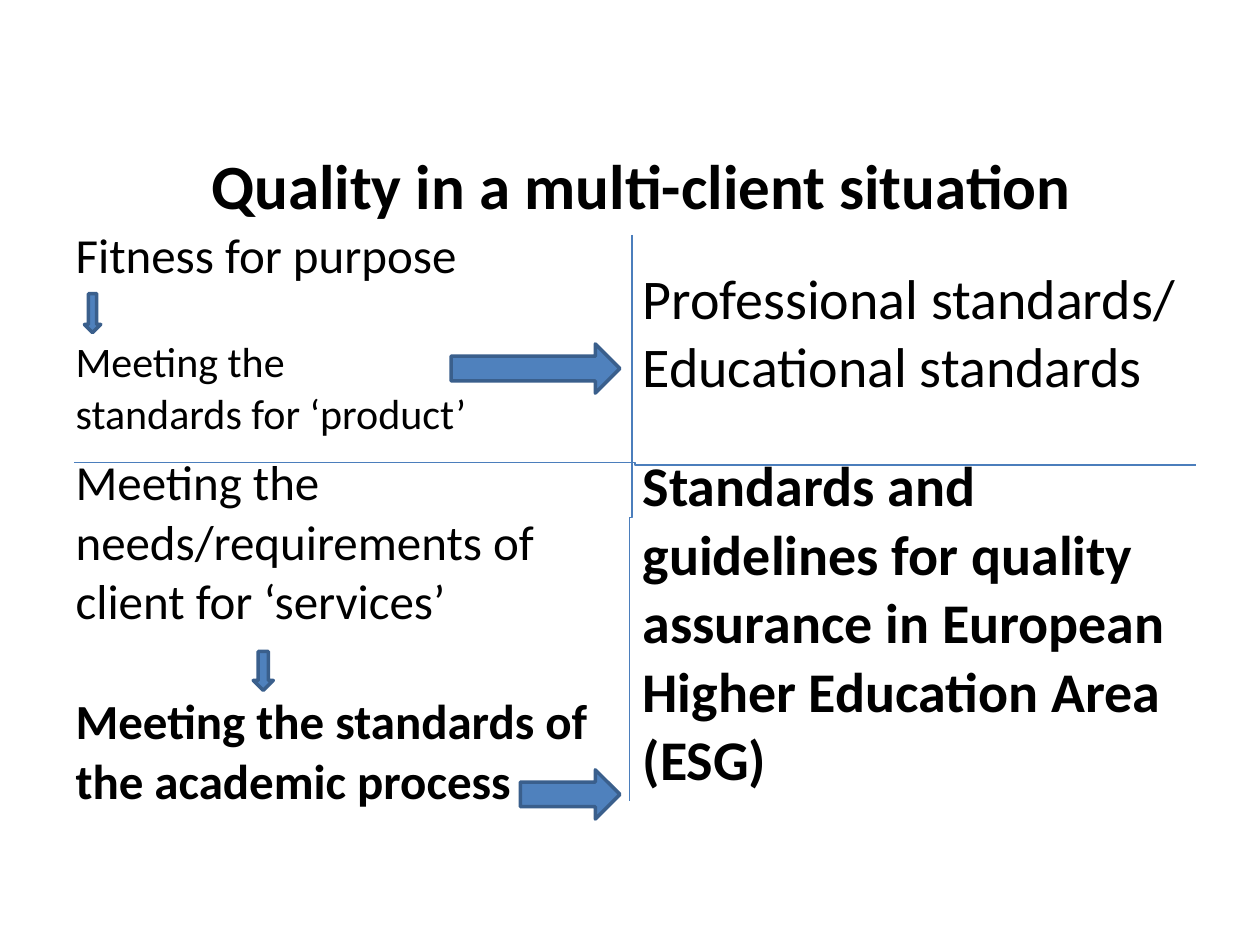
from lxml.etree import SubElement
from pptx import Presentation
from pptx.dml.color import RGBColor
from pptx.enum.shapes import MSO_CONNECTOR, MSO_SHAPE
from pptx.enum.text import MSO_ANCHOR, PP_ALIGN
from pptx.oxml.ns import qn
from pptx.util import Inches, Pt

COLORS = {"text": "000000", "cell": "FFFFFF", "arrow": "4F81BD",
          "outline": "3A5F8C", "divider": "4B7EBC"}
FONT = "Calibri"


def rgb(name):
    """Return a named colour."""
    return RGBColor.from_string(COLORS[name])


def add_run(p, text, size, bold=False):
    """Append a formatted run to a paragraph."""
    r = p.add_run()
    r.text = text
    r.font.name, r.font.size, r.font.bold = FONT, Pt(size), bold
    r.font.color.rgb = rgb("text")


def add_title(s, text):
    """Add the centred slide title."""
    tf = s.shapes.add_textbox(Inches(0.59), Inches(1.11), Inches(9), Inches(0.71)).text_frame
    tf.word_wrap = True
    tf.vertical_anchor = MSO_ANCHOR.MIDDLE
    p = tf.paragraphs[0]
    p.alignment = PP_ALIGN.CENTER
    add_run(p, text, 36, True)


def fill_cell(cell, paragraphs, top=0.05):
    """Write paragraphs of (lines, size, bold, space before) into a cell."""
    cell.fill.solid()
    cell.fill.fore_color.rgb = rgb("cell")
    cell.margin_top = Inches(top)
    tf = cell.text_frame
    for i, (lines, size, bold, space) in enumerate(paragraphs):
        p = tf.add_paragraph() if i else tf.paragraphs[0]
        if space:
            p.space_before = Pt(space)
        for j, line in enumerate(lines):
            if j:
                p.add_line_break()
            add_run(p, line, size, bold)


def add_standards_table(s):
    """Add the two-by-two table of purposes and standards."""
    heights = (1.8, 2.82)
    table = s.shapes.add_table(2, 2, Inches(0.5), Inches(1.75), Inches(9),
                               Inches(sum(heights))).table
    table.first_row = table.horz_banding = False
    for row, height in zip(table.rows, heights):
        row.height = Inches(height)
    fill_cell(table.cell(0, 0), [
        (["Fitness for purpose"], 28, False, 0),
        (["Meeting the ", "standards for ‘product’"], 24, False, 29.3)])
    fill_cell(table.cell(0, 1), [
        (["Professional standards/"], 32, False, 0),
        (["Educational standards"], 32, False, 0)], top=0.36)
    fill_cell(table.cell(1, 0), [
        (["Meeting the needs/requirements of client for ‘services’"], 28, False, 0),
        (["Meeting the standards of the academic process"], 28, True, 34.2)])
    fill_cell(table.cell(1, 1), [
        (["Standards and guidelines for quality assurance in European "
          "Higher Education Area (ESG)"], 32, True, 0)])


def add_arrow(s, kind, left, top, width, height):
    """Add a block arrow."""
    arrow = s.shapes.add_shape(kind, Inches(left), Inches(top), Inches(width), Inches(height))
    arrow.shadow.inherit = False
    arrow.fill.solid()
    arrow.fill.fore_color.rgb = rgb("arrow")
    arrow.line.color.rgb = rgb("outline")
    arrow.line.width = Pt(2)


def add_divider(s, x1, y1, x2, y2, rotation=0):
    """Add a thin elbow divider, turned by the given degrees."""
    line = s.shapes.add_connector(MSO_CONNECTOR.ELBOW, Inches(x1), Inches(y1),
                                  Inches(x2), Inches(y2))
    line.line.color.rgb = rgb("divider")
    line.line.width = Pt(0.75)
    spPr = line._element.spPr
    SubElement(spPr, qn("a:effectLst"))
    if rotation:
        spPr.find(qn("a:xfrm")).set("rot", str(rotation * 60000))


def main():
    """Build and save the slide."""
    prs = Presentation()
    prs.slide_width, prs.slide_height = Inches(10), Inches(7.5)
    s = prs.slides.add_slide(prs.slide_layouts[6])
    add_title(s, "Quality in a multi-client situation")
    add_standards_table(s)
    add_divider(s, 0.59, 3.67, 9.49, 3.69)
    add_arrow(s, MSO_SHAPE.DOWN_ARROW, 0.67, 2.33, 0.13, 0.31)
    add_arrow(s, MSO_SHAPE.RIGHT_ARROW, 3.58, 2.73, 1.34, 0.39)
    add_arrow(s, MSO_SHAPE.DOWN_ARROW, 2.01, 5.17, 0.16, 0.31)
    add_arrow(s, MSO_SHAPE.RIGHT_ARROW, 4.13, 6.11, 0.79, 0.39)
    add_divider(s, 2.76, 4.1, 7.25, 4.12, rotation=90)
    prs.save("out.pptx")


if __name__ == "__main__":
    main()
